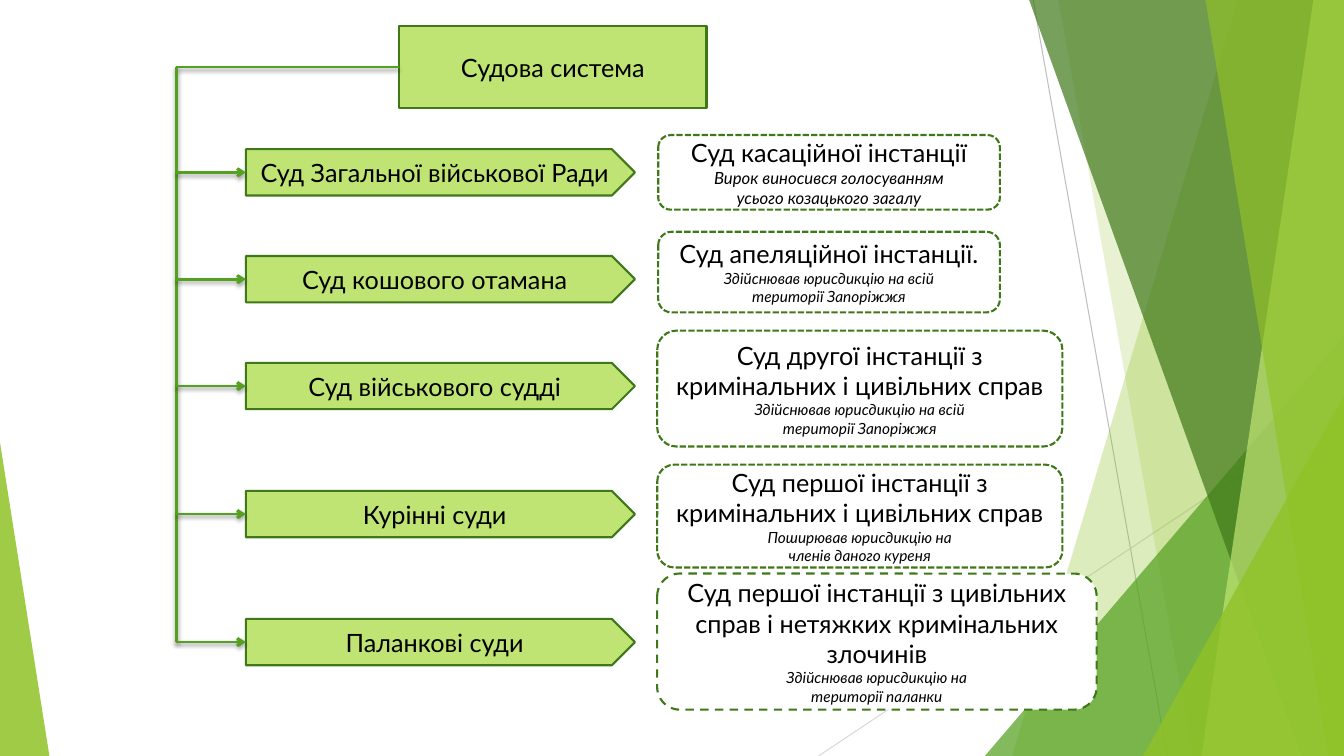
from pptx import Presentation
from pptx.dml.color import RGBColor
from pptx.enum.dml import MSO_LINE
from pptx.enum.shapes import MSO_CONNECTOR, MSO_SHAPE
from pptx.enum.text import MSO_ANCHOR, PP_ALIGN
from pptx.oxml import parse_xml
from pptx.oxml.ns import nsdecls, qn
from pptx.util import Inches, Pt
from lxml.etree import SubElement

BLACK = RGBColor(0x00, 0x00, 0x00)
WHITE = RGBColor(0xFF, 0xFF, 0xFF)
SILVER = RGBColor(0xBF, 0xBF, 0xBF)
PALE = RGBColor(0xD9, 0xD9, 0xD9)
LIME = RGBColor(0xC0, 0xE4, 0x74)
LEAF = RGBColor(0x90, 0xC2, 0x26)
GREEN = RGBColor(0x54, 0xA0, 0x21)
DARK = RGBColor(0x3F, 0x78, 0x19)

COLS, ROWS = 160, 90
UNIT = Inches(7.5) / ROWS
HEAD = {"size": Pt(18), "name": "Lato", "italic": False}
NOTE = {"size": Pt(11), "name": "Lato", "italic": True}
FIRST = {**NOTE, "size": Pt(12)}
FRAME = {"word_wrap": True, "vertical_anchor": MSO_ANCHOR.MIDDLE}
DASH = {"dash_style": MSO_LINE.SQUARE_DOT}
LONG = {"dash_style": MSO_LINE.DASH}
SHADE = (
    f'<a:effectLst {nsdecls("a")}><a:outerShdw blurRad="38100" dist="25400" '
    'dir="5400000" rotWithShape="0"><a:srgbClr val="000000"><a:alpha val="35000"/>'
    '</a:srgbClr></a:outerShdw></a:effectLst>'
)

BANDS = [
    (147.36, 160, 120.48, LEAF, 30),
    (126, 160, 141.96, LEAF, 20),
    (122.52, 160, 154.92, DARK, 70),
    (156.36, 160, 143.04, LIME, 70),
    (143.52, 160, 158.16, LEAF, 65),
]
PEAKS = [
    (117.24, 40, 42.76, 1, GREEN, 72),
    (136.08, 47.16, 23.92, 1, LEAF, 80),
    (0, 52.68, 5.88, 0, LEAF, 85),
]
COURTS = [
    ("Суд Загальної військової Ради", 20.52, (78.36, 16.08, 40.68, 8.88), DASH, FIRST,
     ["Суд касаційної інстанції"],
     ["Вирок виносився голосуванням", "усього козацького загалу"]),
    ("Суд кошового отамана", 33.24, (78.36, 27.6, 40.68, 9.6), DASH, NOTE,
     ["Суд апеляційної інстанції."],
     ["Здійснював юрисдикцію на всій", "території Запоріжжя"]),
    ("Суд військового судді", 45.96, (78.24, 39.36, 48.24, 13.8), DASH, NOTE,
     ["Суд другої інстанції з", "кримінальних і цивільних справ"],
     ["Здійснював юрисдикцію на всій", "території Запоріжжя"]),
    ("Курінні суди", 61.2, (78.24, 55.32, 48.24, 12.24), DASH, NOTE,
     ["Суд першої інстанції з", "кримінальних і цивільних справ"],
     ["Поширював юрисдикцію на", "членів даного куреня"]),
    ("Паланкові суди", 76.44, (78.24, 68.28, 52.32, 16.2), LONG, NOTE,
     ["Суд першої інстанції з цивільних", "справ і нетяжких кримінальних злочинів"],
     ["Здійснював юрисдикцію на", "території паланки"]),
]
TRUNK, MID = 21, 7.98
PLATE, WIDE, HIGH = 29.28, 46.32, 5.52


def grid(*spots):
    """Turn grid columns or rows into lengths."""
    return [round(spot * UNIT) for spot in spots]


def style(thing, form):
    """Set every format value on a thing."""
    for key, value in form.items():
        setattr(thing, key, value)


class Chart:
    """Hold the slide and draw its elements in one style."""

    def __init__(self, deck):
        """Add a title-only slide."""
        self.slide = deck.slides.add_slide(deck.slide_layouts[5])
        self.shapes = self.slide.shapes

    def paint(self, shape, fill, edge=None, form={}):
        """Fill and outline a shape."""
        shape.fill.solid()
        shape.fill.fore_color.rgb = fill
        if edge is None:
            shape.line.fill.background()
        else:
            shape.line.color.rgb = edge
            style(shape.line, {"width": Pt(1.5), **form})

    def fade(self, shape, fill, share):
        """Fill a shape with a see-through colour."""
        shape.shadow.inherit = False
        self.paint(shape, fill)
        tone = shape._element.xpath("./p:spPr/a:solidFill/a:srgbClr")[0]
        SubElement(tone, qn("a:alpha"), val=str(share * 1000))

    def label(self, shape, lines):
        """Set centred lines, each with its font."""
        frame = shape.text_frame
        style(frame, FRAME)
        frame.text = "\n".join(text for text, font in lines)
        for para, (text, font) in zip(frame.paragraphs, lines):
            para.alignment = PP_ALIGN.CENTER
            style(para.runs[0].font, font)
            para.runs[0].font.color.rgb = BLACK

    def title(self, text, box):
        """Shape the title as a rounded box."""
        head = self.shapes.title
        style(head, dict(zip(("left", "top", "width", "height"), grid(*box))))
        head._element.spPr.append(parse_xml(
            f'<a:prstGeom {nsdecls("a")} prst="roundRect"><a:avLst/></a:prstGeom>'))
        self.paint(head, LIME, DARK)
        self.label(head, [(text, HEAD)])
        return head

    def box(self, kind, box, fill, lines, form={}):
        """Add an outlined box with text."""
        shape = self.shapes.add_shape(kind, *grid(*box))
        shape.shadow.inherit = False
        self.paint(shape, fill, DARK, form)
        self.label(shape, lines)
        return shape

    def band(self, left, right, foot, fill, share):
        """Add a slanted band of full height."""
        points = [(right, 0), (right, ROWS), (foot, ROWS)]
        edge = self.shapes.build_freeform(*grid(left, 0), scale=1.0)
        edge.add_line_segments([grid(*point) for point in points], close=True)
        self.fade(edge.convert_to_shape(), fill, share)

    def peak(self, left, top, width, tip, fill, share):
        """Add a triangle that stands on the slide's foot."""
        shape = self.shapes.add_shape(
            MSO_SHAPE.ISOSCELES_TRIANGLE, *grid(left, top, width, ROWS - top))
        shape.adjustments[0] = tip
        self.fade(shape, fill, share)

    def line(self, ends, tone, width, start=None, stop=None, shade=False, arrow=False):
        """Add a line, joined to the left side of boxes."""
        link = self.shapes.add_connector(MSO_CONNECTOR.STRAIGHT, *grid(*ends))
        if start is not None:
            link.begin_connect(start, 1)
        if stop is not None:
            link.end_connect(stop, 1)
        link.line.color.rgb = tone
        link.line.width = Pt(width)
        if arrow:
            SubElement(link._element.xpath("./p:spPr/a:ln")[0], qn("a:tailEnd"), type="arrow")
        glow = SHADE if shade else f'<a:effectLst {nsdecls("a")}/>'
        link._element.spPr.append(parse_xml(glow))


def main():
    """Build the slide and save it."""
    deck = Presentation()
    style(deck, {"slide_width": round(COLS * UNIT), "slide_height": round(ROWS * UNIT)})
    chart = Chart(deck)
    chart.line((123, 0, 138.96, ROWS), SILVER, 0.75)
    chart.line((COLS, 48.36, 97.44, ROWS), PALE, 0.75)
    for band in BANDS[:2]:
        chart.band(*band)
    chart.peak(*PEAKS[0])
    for band in BANDS[2:]:
        chart.band(*band)
    for peak in PEAKS[1:]:
        chart.peak(*peak)

    head = chart.title("Судова система", (47.52, 3.12, 36.6, 9.72))
    chart.line((47.52, MID, TRUNK, MID), GREEN, 2, start=head, shade=True)
    chart.line((TRUNK, MID, TRUNK, COURTS[-1][1]), GREEN, 2, shade=True)
    for name, mid, card, dash, font, heads, notes in COURTS:
        plate = chart.box(MSO_SHAPE.PENTAGON, (PLATE, mid - HIGH / 2, WIDE, HIGH),
                          LIME, [(name, HEAD)])
        lines = [(text, HEAD) for text in heads] + [(text, font) for text in notes]
        chart.box(MSO_SHAPE.ROUNDED_RECTANGLE, card, WHITE, lines, dash)
        chart.line((TRUNK, mid, PLATE, mid), GREEN, 2, stop=plate, shade=True, arrow=True)
    deck.save("out.pptx")


if __name__ == "__main__":
    main()
